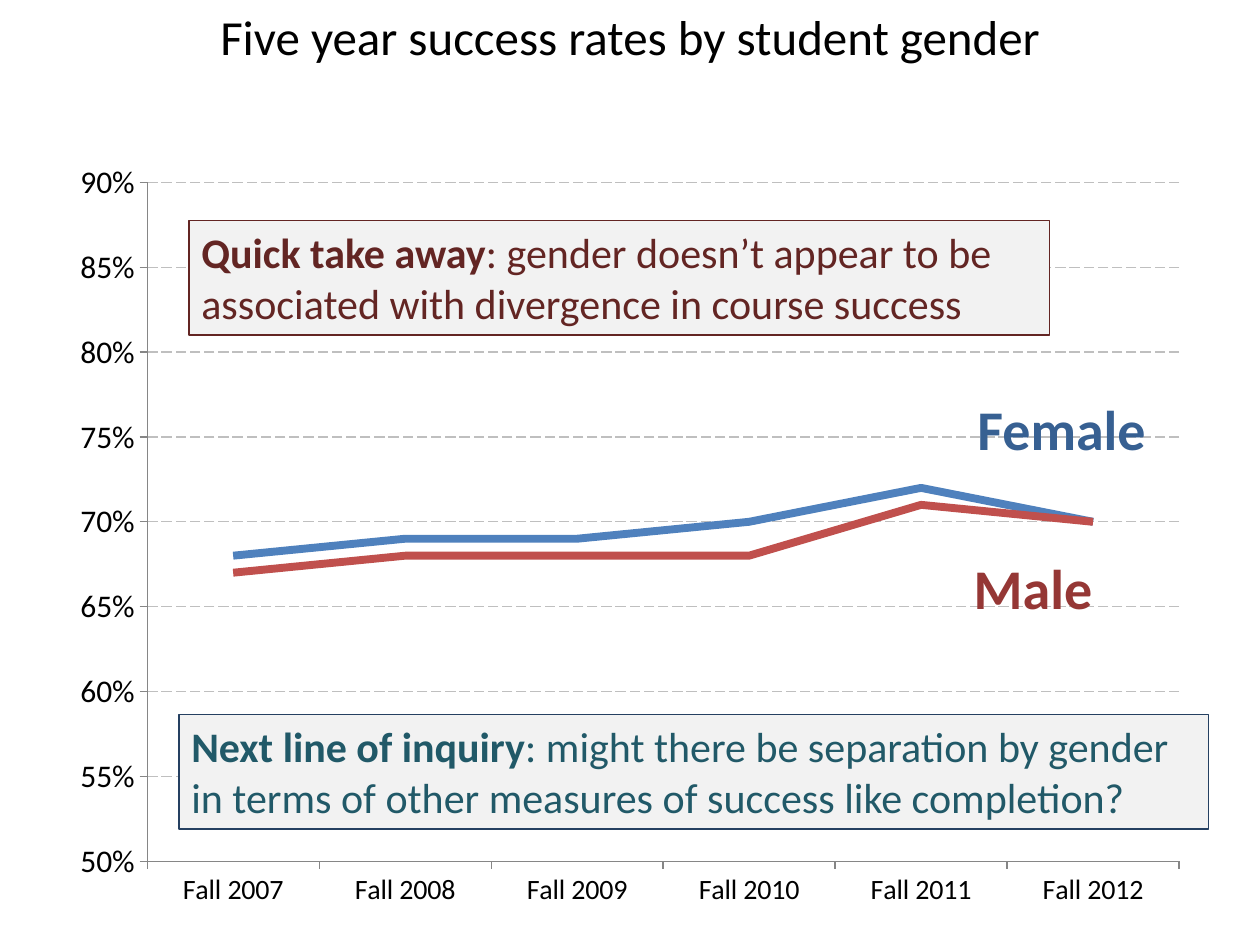
import pptx
import pptx.chart.data
import pptx.dml.color
import pptx.enum.chart
import pptx.enum.dml
import pptx.enum.shapes
import pptx.enum.text
import pptx.oxml
import pptx.util

Inches, Pt = pptx.util.Inches, pptx.util.Pt

TITLE = "Five year success rates by student gender"
TERMS = [f"Fall {year}" for year in range(2007, 2013)]
RATES = [
    ("Series 1", "4F81BD", (0.68, 0.69, 0.69, 0.7, 0.72, 0.7)),
    ("Series 2", "C0504D", (0.67, 0.68, 0.68, 0.68, 0.71, 0.7)),
]
CHART_BOX = (0.46, 1.17, 9.08, 6.16)
PLOT_BOX = (1.17, 1.45, 8.19, 5.39)
LABELS = [
    ("Male", "953735", (7.63, 4.34, 1.77, 0.64)),
    ("Female", "376092", (7.66, 3.08, 1.77, 0.64)),
]
CALLOUTS = [
    ("Quick take away",
     ": gender doesn’t appear to be associated with divergence in course success",
     "632523", "632523", (1.5, 1.75, 6.83, 0.91)),
    ("Next line of inquiry",
     ": might there be separation by gender in terms of other measures of success like completion?",
     "215968", "254061", (1.42, 5.67, 8.17, 0.91)),
]


def rgb(value):
    return pptx.dml.color.RGBColor.from_string(value)


def apply(target, **values):
    for name, value in values.items():
        setattr(target, name, value)


def style_font(font, color, **values):
    apply(font, name="Calibri", **values)
    font.color.rgb = rgb(color)


def style_line(line, color, width):
    line.color.rgb = rgb(color)
    line.width = Pt(width)


def write(sp, runs, color, size, align, anchor):
    tf = sp.text_frame
    apply(tf, word_wrap=True, vertical_anchor=anchor,
          auto_size=pptx.enum.text.MSO_AUTO_SIZE.SHAPE_TO_FIT_TEXT)
    p = tf.paragraphs[0]
    p.alignment = align
    for text, bold in runs:
        r = p.add_run()
        r.text = text
        style_font(r.font, color, size=Pt(size), bold=bold)


def set_plot_box(chart):
    left, top, width, height = CHART_BOX
    x, y, w, h = PLOT_BOX
    parts = {"x": (x - left) / width, "y": (y - top) / height,
             "w": w / width, "h": h / height}
    modes = "".join(f'<c:{k}Mode val="edge"/>' for k in "xy")
    sizes = "".join(f'<c:{k} val="{v:.3f}"/>' for k, v in parts.items())
    plot = chart.plots[0]._element.getparent()
    for old in plot.findall(pptx.oxml.ns.qn("c:layout")):
        plot.remove(old)
    plot.insert(0, pptx.oxml.parse_xml(
        f'<c:layout {pptx.oxml.ns.nsdecls("c")}><c:manualLayout>'
        f'<c:layoutTarget val="inner"/>{modes}{sizes}</c:manualLayout></c:layout>'))


def add_rates_chart(s):
    data = pptx.chart.data.CategoryChartData(number_format="0%")
    data.categories = TERMS
    for name, _, values in RATES:
        data.add_series(name, values)
    chart = s.shapes.add_chart(pptx.enum.chart.XL_CHART_TYPE.LINE,
                               *map(Inches, CHART_BOX), data).chart
    apply(chart, has_legend=False, has_title=False)
    style_font(chart.font, "000000", size=Pt(18))
    chart.plots[0].vary_by_categories = False
    for series, (_, color, _) in zip(chart.plots[0].series, RATES):
        series.smooth = False
        series.marker.style = pptx.enum.chart.XL_MARKER_STYLE.NONE
        style_line(series.format.line, color, 4.5)
    terms, rates = chart.category_axis, chart.value_axis
    for axis, size in ((terms, 16), (rates, 18)):
        axis.major_tick_mark = pptx.enum.chart.XL_TICK_MARK.OUTSIDE
        style_font(axis.tick_labels.font, "000000", size=Pt(size))
        style_line(axis.format.line, "868686", 0.75)
    apply(rates, minimum_scale=0.5, maximum_scale=0.9, major_unit=0.05,
          has_major_gridlines=True)
    apply(rates.tick_labels, number_format="0%", number_format_is_linked=False)
    grid = rates.major_gridlines.format.line
    style_line(grid, "BFBFBF", 0.75)
    grid.dash_style = pptx.enum.dml.MSO_LINE.LONG_DASH
    set_plot_box(chart)


def main():
    align, anchor = pptx.enum.text.PP_ALIGN, pptx.enum.text.MSO_ANCHOR
    prs = pptx.Presentation()
    apply(prs, slide_width=Inches(10), slide_height=Inches(7.5))
    s = prs.slides.add_slide(prs.slide_layouts[5])

    title = s.shapes.title
    apply(title, left=Inches(0), top=Inches(0), width=Inches(10), height=Inches(0.57))
    write(title, [(TITLE, False)], "000000", 28, align.CENTER, anchor.TOP)

    add_rates_chart(s)

    for text, color, box in LABELS:
        sp = s.shapes.add_textbox(*map(Inches, box))
        write(sp, [(text, True)], color, 32, align.LEFT, anchor.TOP)

    for lead, rest, color, border, box in CALLOUTS:
        sp = s.shapes.add_shape(pptx.enum.shapes.MSO_SHAPE.RECTANGLE, *map(Inches, box))
        sp.shadow.inherit = False
        sp.fill.solid()
        sp.fill.fore_color.rgb = rgb("F2F2F2")
        style_line(sp.line, border, 0.75)
        write(sp, [(lead, True), (rest, False)], color, 24, align.LEFT, anchor.TOP)

    prs.save("out.pptx")


if __name__ == "__main__":
    main()
